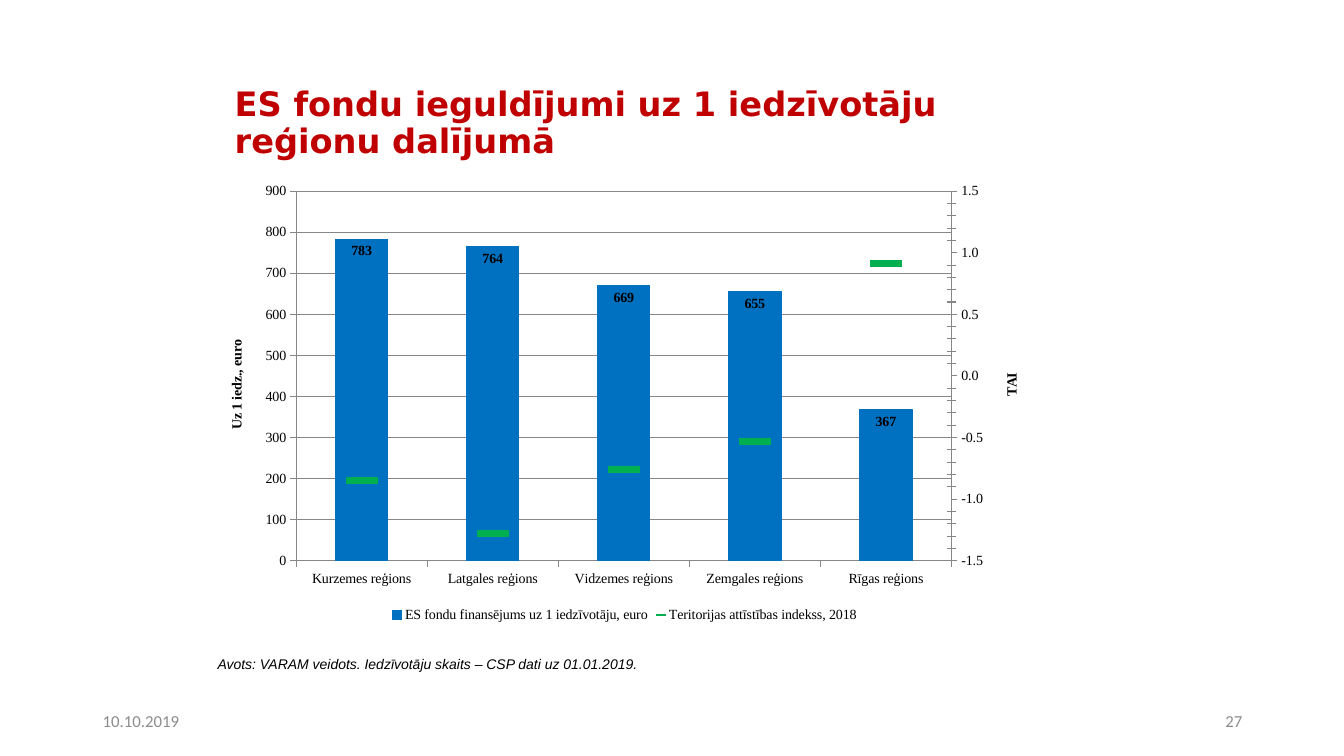
from dataclasses import dataclass

from pptx import Presentation
from pptx.chart.axis import ValueAxis
from pptx.chart.chart import Chart
from pptx.chart.data import CategoryChartData
from pptx.dml.color import RGBColor
from pptx.enum.chart import XL_LABEL_POSITION as LabelPosition
from pptx.enum.chart import XL_LEGEND_POSITION as LegendPosition
from pptx.enum.chart import XL_MARKER_STYLE as MarkerStyle
from pptx.enum.chart import XL_TICK_MARK as TickMark
from pptx.enum.chart import XL_TICK_LABEL_POSITION as TickLabelPosition
from pptx.enum.chart import XL_CHART_TYPE as ChartType
from pptx.enum.text import MSO_ANCHOR as Anchor
from pptx.enum.text import PP_ALIGN as Align
from pptx.oxml import parse_xml
from pptx.oxml.ns import nsdecls, qn
from pptx.slide import Slide
from pptx.util import Inches, Pt

COLORS = {
    "title": "C00000",
    "text": "000000",
    "footer": "8C8C8C",
    "grid": "878787",
    "funding": "0070C0",
    "index": "00B050",
}
REGIONS = ["Kurzemes", "Latgales", "Vidzemes", "Zemgales", "Rīgas"]
FUNDING = [783, 764, 669, 655, 367]
DEVELOPMENT_INDEX = [-0.85, -1.28, -0.76, -0.53, 0.91]


@dataclass
class Label:
    text: str
    left: float
    top: float
    width: float
    height: float
    font: str
    size: float
    color: str
    bold: bool = False
    italic: bool = False
    align: Align = Align.LEFT
    anchor: Anchor = Anchor.MIDDLE
    line_spacing: float = 1.0


@dataclass
class AxisStyle:
    title: str
    minimum: float
    maximum: float
    step: float
    number_format: str
    gridlines: bool


LABELS = [
    Label("ES fondu ieguldījumi uz 1 iedzīvotāju reģionu dalījumā",
          2.23, 0.73, 7.4, 0.91, "DejaVu Sans", 24, "title", bold=True,
          anchor=Anchor.BOTTOM, line_spacing=0.9),
    Label("Avots: VARAM veidots. Iedzīvotāju skaits – CSP dati uz 01.01.2019.",
          2.06, 6.45, 5.03, 0.45, "Arial", 10, "text", italic=True,
          anchor=Anchor.TOP),
    Label("10.10.2019", 0.92, 6.95, 3, 0.4, "Calibri", 12, "footer"),
    Label("27", 9.42, 6.95, 3, 0.4, "Calibri", 12, "footer", align=Align.RIGHT),
]
FUNDING_AXIS = AxisStyle("Uz 1 iedz., euro", 0, 900, 100, "#,##0", True)
INDEX_AXIS = AxisStyle("TAI", -1.5, 1.5, 0.5, "0.0", False)


def rgb(name: str) -> RGBColor:
    return RGBColor.from_string(COLORS[name])


def add_label(slide: Slide, label: Label) -> None:
    shape = slide.shapes.add_textbox(Inches(label.left), Inches(label.top),
                                     Inches(label.width), Inches(label.height))
    frame = shape.text_frame
    frame.word_wrap = True
    frame.vertical_anchor = label.anchor
    paragraph = frame.paragraphs[0]
    paragraph.alignment = label.align
    paragraph.line_spacing = label.line_spacing
    run = paragraph.add_run()
    run.text = label.text
    run.font.name = label.font
    run.font.size = Pt(label.size)
    run.font.bold = label.bold
    run.font.italic = label.italic
    run.font.color.rgb = rgb(label.color)


def style_value_axis(axis: ValueAxis, style: AxisStyle) -> None:
    axis.minimum_scale = style.minimum
    axis.maximum_scale = style.maximum
    axis.major_unit = style.step
    axis.major_tick_mark = TickMark.OUTSIDE
    axis.tick_labels.number_format = style.number_format
    axis.tick_labels.number_format_is_linked = False
    axis.format.line.color.rgb = rgb("grid")
    axis.has_major_gridlines = style.gridlines
    if style.gridlines:
        axis.major_gridlines.format.line.color.rgb = rgb("grid")
    run = axis.axis_title.text_frame.paragraphs[0].add_run()
    run.text = style.title
    run.font.name = "Times New Roman"
    run.font.size = Pt(10)
    run.font.bold = True
    run.font.color.rgb = rgb("text")


def move_index_to_right_axis(chart: Chart) -> ValueAxis:
    """Turn the second series into a line on its own value axis."""
    plot_area = chart._chartSpace.chart.plotArea
    bar_chart = plot_area.find(qn("c:barChart"))
    series = bar_chart.findall(qn("c:ser"))[1]
    for invert in series.findall(qn("c:invertIfNegative")):
        series.remove(invert)
    line_chart = parse_xml(
        f'<c:lineChart {nsdecls("c")}><c:grouping val="standard"/>'
        '<c:varyColors val="0"/><c:marker val="1"/>'
        '<c:axId val="5001"/><c:axId val="5002"/></c:lineChart>')
    line_chart.insert(2, series)
    bar_chart.addnext(line_chart)
    category_axis = parse_xml(
        f'<c:catAx {nsdecls("c")}><c:axId val="5001"/>'
        '<c:scaling><c:orientation val="minMax"/></c:scaling>'
        '<c:delete val="1"/><c:axPos val="b"/><c:crossAx val="5002"/></c:catAx>')
    value_axis = parse_xml(
        f'<c:valAx {nsdecls("c")}><c:axId val="5002"/>'
        '<c:scaling><c:orientation val="minMax"/></c:scaling>'
        '<c:delete val="0"/><c:axPos val="r"/><c:tickLblPos val="nextTo"/>'
        '<c:crossAx val="5001"/><c:crosses val="max"/></c:valAx>')
    plot_area.find(qn("c:valAx")).addnext(category_axis)
    category_axis.addnext(value_axis)
    return ValueAxis(value_axis)


def set_plot_layout(chart: Chart, x: float, y: float, w: float, h: float) -> None:
    plot_area = chart._chartSpace.chart.plotArea
    for layout in plot_area.findall(qn("c:layout")):
        plot_area.remove(layout)
    plot_area.insert(0, parse_xml(
        f'<c:layout {nsdecls("c")}><c:manualLayout><c:layoutTarget val="inner"/>'
        '<c:xMode val="edge"/><c:yMode val="edge"/>'
        f'<c:x val="{x}"/><c:y val="{y}"/><c:w val="{w}"/><c:h val="{h}"/>'
        '</c:manualLayout></c:layout>'))


def add_region_chart(slide: Slide) -> None:
    data = CategoryChartData()
    data.categories = [f"{region} reģions" for region in REGIONS]
    data.add_series("ES fondu finansējums uz 1 iedzīvotāju, euro", FUNDING)
    data.add_series("Teritorijas attīstības indekss, 2018", DEVELOPMENT_INDEX)
    chart = slide.shapes.add_chart(
        ChartType.COLUMN_CLUSTERED, Inches(2.06), Inches(1.73),
        Inches(8.27), Inches(4.49), data).chart
    chart.font.name = "Times New Roman"
    chart.font.size = Pt(10)
    chart.font.color.rgb = rgb("text")
    chart.has_title = False
    chart.has_legend = True
    chart.legend.position = LegendPosition.BOTTOM
    chart.legend.include_in_layout = False

    # Axes
    chart.category_axis.major_tick_mark = TickMark.OUTSIDE
    chart.category_axis.tick_label_position = TickLabelPosition.LOW
    chart.category_axis.format.line.color.rgb = rgb("grid")
    style_value_axis(chart.value_axis, FUNDING_AXIS)
    style_value_axis(move_index_to_right_axis(chart), INDEX_AXIS)
    set_plot_layout(chart, 0.106, 0.037, 0.786, 0.817)

    # Funding columns
    columns, index_line = chart.plots
    columns.gap_width = 150
    columns.vary_by_categories = False
    funding = columns.series[0]
    funding.format.fill.solid()
    funding.format.fill.fore_color.rgb = rgb("funding")
    funding.format.line.color.rgb = rgb("funding")
    funding.format.line.width = Pt(0.75)
    labels = funding.data_labels
    labels.show_value = True
    labels.position = LabelPosition.INSIDE_END
    labels.number_format = "#,##0"
    labels.number_format_is_linked = False
    labels.font.name = "Times New Roman"
    labels.font.size = Pt(10)
    labels.font.bold = True
    labels.font.color.rgb = rgb("text")

    # Development index dashes
    index = index_line.series[0]
    index.smooth = False
    index.format.line.fill.background()
    index.marker.style = MarkerStyle.DASH
    index.marker.size = 22
    index.marker.format.fill.solid()
    index.marker.format.fill.fore_color.rgb = rgb("index")
    index.marker.format.line.fill.background()


def main() -> None:
    presentation = Presentation()
    presentation.slide_width = Inches(13.33)
    presentation.slide_height = Inches(7.5)
    slide = presentation.slides.add_slide(presentation.slide_layouts[6])
    add_region_chart(slide)
    for label in LABELS:
        add_label(slide, label)
    presentation.save("out.pptx")


if __name__ == "__main__":
    main()
